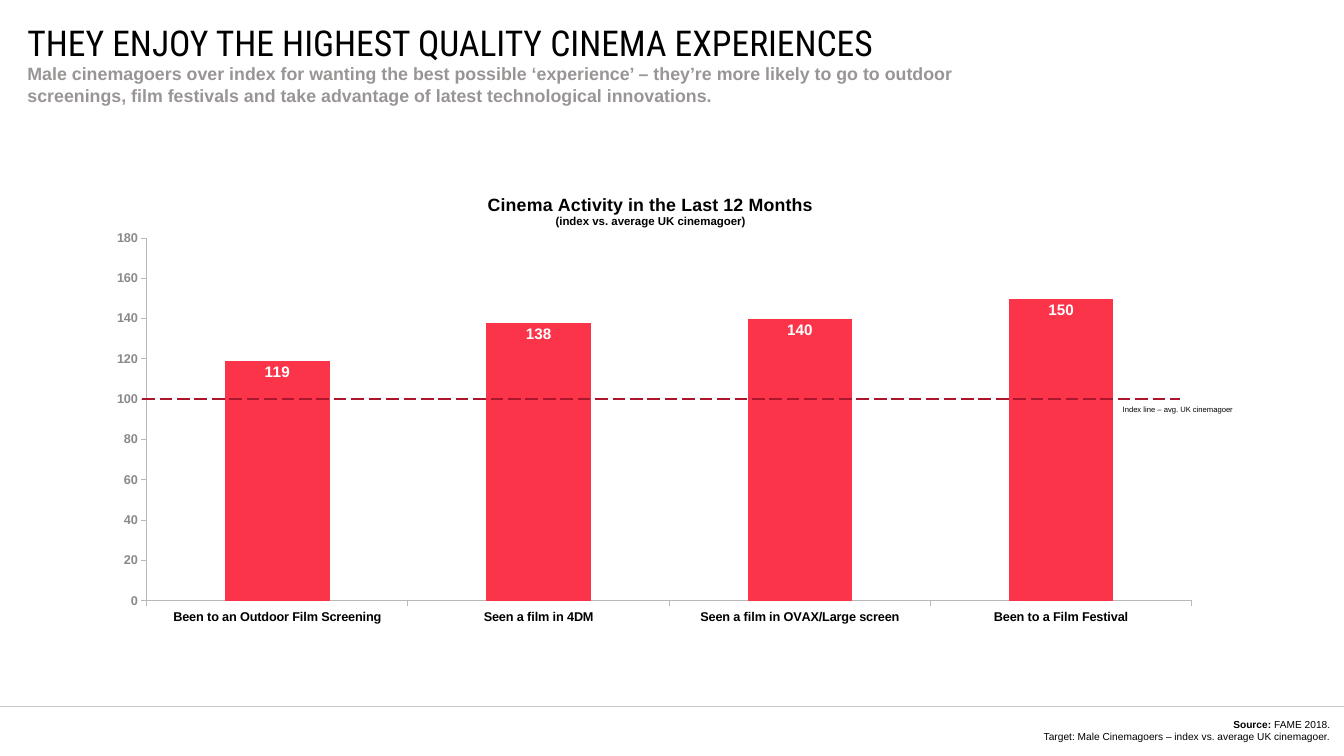
import pptx
import pptx.chart.data
import pptx.dml.color
import pptx.enum.chart
import pptx.enum.dml
import pptx.enum.shapes
import pptx.enum.text
import pptx.oxml
import pptx.oxml.ns
import pptx.util

Pt = pptx.util.Pt
ALIGN = pptx.enum.text.PP_ALIGN
ANCHOR = pptx.enum.text.MSO_ANCHOR
FIT = pptx.enum.text.MSO_AUTO_SIZE
TICK = pptx.enum.chart.XL_TICK_MARK
INDEX, TOP = 100, 180
PLOT = (5.7, 14.5, 92.4, 72.4)  # percent of the chart's box
ACTS = {
    "Been to an Outdoor Film Screening": 119,
    "Seen a film in 4DM": 138,
    "Seen a film in OVAX/Large screen": 140,
    "Been to a Film Festival": 150,
}

deck = pptx.Presentation()
deck.slide_width = pptx.util.Inches(14.7)
deck.slide_height = pptx.util.Inches(8.27)
PAGE = (0, 0, deck.slide_width, deck.slide_height)


def color(code):
    return pptx.dml.color.RGBColor.from_string(code)


def part(box, x, y, w=0, h=0):
    """Return the part of a box given in percent of its size."""
    left, top, wide, high = box
    return (int(left + wide * x / 100), int(top + high * y / 100),
            int(wide * w / 100), int(high * h / 100))


def style(font, size, code, bold=False, name="Arial"):
    font.size, font.bold, font.name = Pt(size), bold, name
    font.color.rgb = color(code)


def frame(shape, pad=0, wrap=True, anchor=ANCHOR.TOP, fit=FIT.NONE):
    body = shape.text_frame
    body.margin_left = body.margin_right = Pt(pad)
    body.margin_top = body.margin_bottom = Pt(pad / 2)
    body.word_wrap, body.vertical_anchor, body.auto_size = wrap, anchor, fit
    return body


def rule(slide, start, end, code, width, dash=None):
    line = slide.shapes.add_connector(
        pptx.enum.shapes.MSO_CONNECTOR.STRAIGHT, *start[:2], *end[:2])
    line.line.color.rgb = color(code)
    line.line.width = Pt(width)
    if dash:
        line.line.dash_style = dash
    line.element.spPr.append(pptx.oxml.parse_xml(
        f'<a:effectLst {pptx.oxml.ns.nsdecls("a")}/>'))


def place(host, spot, **vals):
    """Fix the layout of a chart part, as shares of the chart."""
    for old in host.findall(pptx.oxml.ns.qn("c:layout")):
        host.remove(old)
    inner = '<c:layoutTarget val="inner"/>' if "w" in vals else ""
    modes = "".join(f'<c:{k}Mode val="edge"/>' for k in "xy")
    nums = "".join(f'<c:{k} val="{v / 100:.3f}"/>' for k, v in vals.items())
    host.insert(spot, pptx.oxml.parse_xml(
        f'<c:layout {pptx.oxml.ns.nsdecls("c")}><c:manualLayout>'
        f'{inner}{modes}{nums}</c:manualLayout></c:layout>'))


def head(slide, box):
    title = slide.shapes.title
    title.left, title.top, title.width, title.height = part(
        box, 2.04, 3.63, 92.38, 3.87)
    body = frame(title, wrap=False, anchor=ANCHOR.MIDDLE)
    body.text = "THEY ENJOY THE HIGHEST QUALITY CINEMA EXPERIENCES"
    para = body.paragraphs[0]
    para.alignment = ALIGN.LEFT
    style(para.font, 28, "000000", name="Roboto Condensed")

    para = frame(slide.shapes.add_textbox(
        *part(box, 2.04, 8.34, 72.65, 5.8))).paragraphs[0]
    para.text = (
        "Male cinemagoers over index for wanting the best possible "
        "‘experience’ – they’re more likely to go to outdoor screenings, "
        "film festivals and take advantage of latest technological "
        "innovations.")
    style(para.font, 14, "999595", True)


def axis(item, code):
    item.has_major_gridlines = False
    item.major_tick_mark, item.minor_tick_mark = TICK.OUTSIDE, TICK.NONE
    item.format.line.color.rgb = color("B9B9BB")
    item.format.line.width = Pt(0.75)
    style(item.tick_labels.font, 10, code, True)


def graph(slide, box):
    data = pptx.chart.data.CategoryChartData(number_format="0")
    data.categories = list(ACTS)
    data.add_series("Series 1", list(ACTS.values()))
    chart = slide.shapes.add_chart(
        pptx.enum.chart.XL_CHART_TYPE.COLUMN_STACKED, *box, data).chart
    style(chart.font, 10, "000000")
    chart.has_legend = False
    chart.has_title = True
    body = chart.chart_title.text_frame
    body.text = ("Cinema Activity in the Last 12 Months\n"
                 "(index vs. average UK cinemagoer)")
    for para, size in zip(body.paragraphs, (14, 9)):
        style(para.font, size, "000000", True)
    place(chart.chart_title.element, 1, x=35.6, y=5)
    place(chart.element.chart.plotArea, 0, **dict(zip("xywh", PLOT)))

    axis(chart.category_axis, "000000")
    axis(chart.value_axis, "8A8A8D")
    chart.value_axis.minimum_scale = 0
    chart.value_axis.maximum_scale = TOP
    chart.value_axis.major_unit = 20

    plot = chart.plots[0]
    plot.gap_width, plot.overlap, plot.vary_by_categories = 150, 100, False
    fill = plot.series[0].format.fill
    fill.solid()
    fill.fore_color.rgb = color("FB3449")
    plot.has_data_labels = True
    tags = plot.data_labels
    tags.show_value = True
    tags.number_format, tags.number_format_is_linked = "0", False
    tags.position = pptx.enum.chart.XL_LABEL_POSITION.INSIDE_END
    style(tags.font, 12, "FFFFFF", True)


def level(slide, box):
    """Draw the index line at its value on the plot."""
    mark = PLOT[1] + PLOT[3] * (1 - INDEX / TOP)
    rule(slide, part(box, 5.3, mark), part(box, 97.1, mark), "AC162C", 1.25,
         pptx.enum.dml.MSO_LINE.LONG_DASH)
    para = frame(slide.shapes.add_textbox(
        *part(box, 91.2, mark + 0.3, 11.64, 3.65)), pad=7.2,
        fit=FIT.SHAPE_TO_FIT_TEXT).paragraphs[0]
    para.text = "Index line – avg. UK cinemagoer"
    style(para.font, 6, "000000")


def foot(slide, box):
    rule(slide, part(box, 0, 93.47), part(box, 100, 93.47), "CAC8C8", 0.5)
    body = frame(slide.shapes.add_textbox(
        *part(box, 63.88, 95.04, 35.1, 3.26)), anchor=ANCHOR.MIDDLE,
        fit=FIT.SHAPE_TO_FIT_TEXT)
    body.text = ("\nTarget: Male Cinemagoers – index vs. average UK "
                 "cinemagoer.")
    for text, bold in (("Source: ", True), ("FAME 2018.", False)):
        run = body.paragraphs[0].add_run()
        run.text, run.font.bold = text, bold
    for para in body.paragraphs:
        para.alignment = ALIGN.RIGHT
        style(para.font, 8, "000000", None)


def main():
    slide = deck.slides.add_slide(deck.slide_layouts[5])
    area = part(PAGE, 6.12, 21.89, 84.15, 66.26)
    head(slide, PAGE)
    graph(slide, area)
    level(slide, area)
    foot(slide, PAGE)
    deck.save("out.pptx")


if __name__ == "__main__":
    main()
